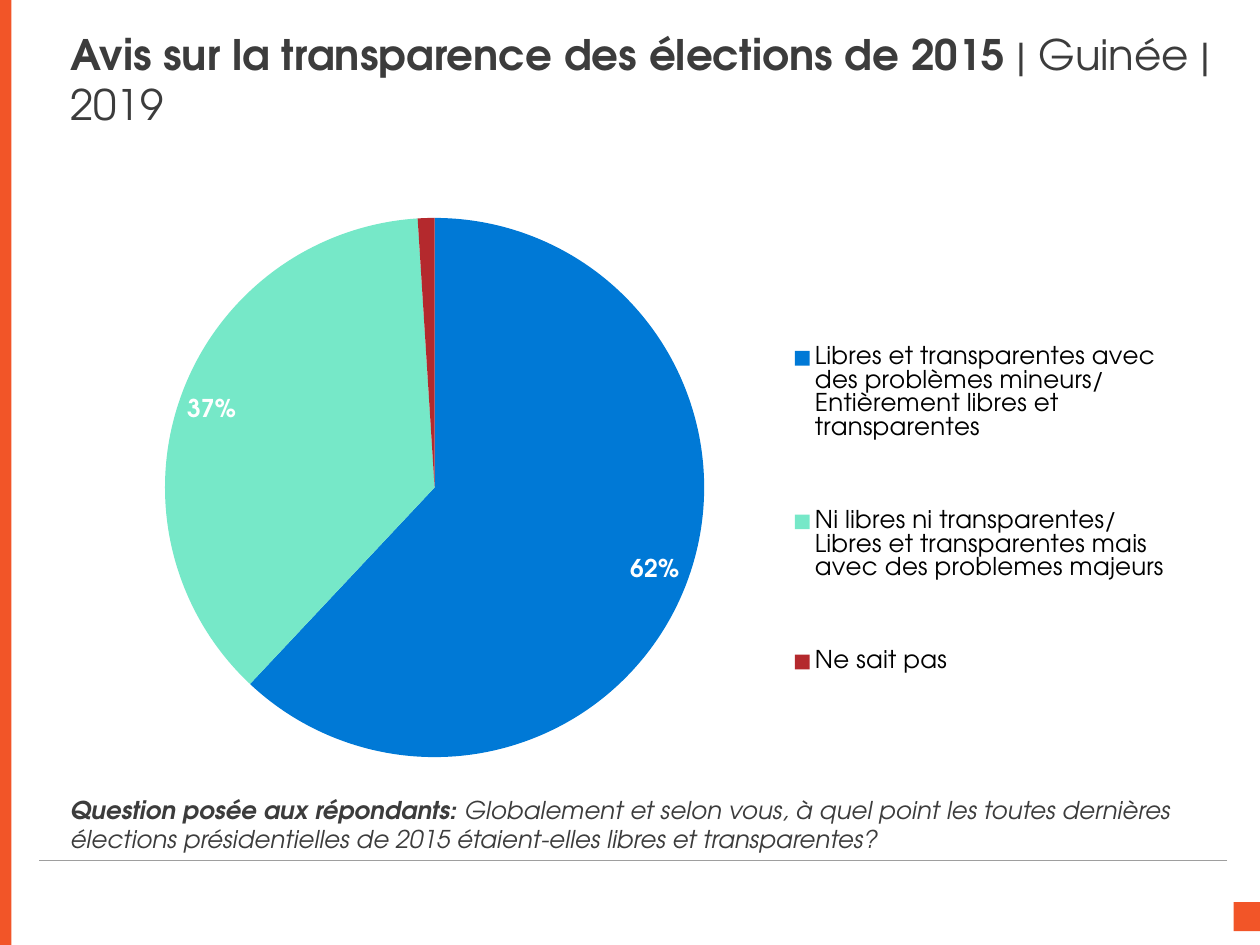
from dataclasses import dataclass
from typing import NamedTuple

import pptx
import pptx.chart.data
import pptx.dml.color
import pptx.enum.chart
import pptx.enum.shapes
import pptx.enum.text
import pptx.oxml
import pptx.oxml.ns
import pptx.util
from pptx.util import Inches


@dataclass(frozen=True)
class Theme:
    font: str = "TeX Gyre Adventor"
    accent: str = "F25528"
    rule: str = "9E9E9E"
    text: str = "3C3C3C"
    legend: str = "000000"
    label: str = "FFFFFF"
    title_size: int = 24
    body_size: int = 14


class Area(NamedTuple):
    left: float
    top: float
    width: float
    height: float

    def lengths(self) -> list:
        return [Inches(value) for value in self]


class Span(NamedTuple):
    text: str
    bold: bool = False


class Slice(NamedTuple):
    name: str
    share: float
    color: str


THEME = Theme()
ACCENTS = [Area(9.79, 7.16, 0.22, 0.23), Area(0, 0, 0.09, 7.5)]
CHART_AREA = Area(0.67, 1.35, 8.69, 4.81)
PIE_AREA = Area(1.31, 1.73, 4.28, 4.28)
LEGEND_AREA = Area(6.25, 2.2, 3.05, 3.7)
SLICES = [
    Slice("Libres et transparentes avec des problèmes mineurs/\n"
          "Entièrement libres et transparentes", 0.62, "0079D6"),
    Slice("Ni libres ni transparentes/\n"
          "Libres et transparentes mais avec des problemes majeurs", 0.37, "76E8C8"),
    Slice("Ne sait pas", 0.01, "B4292D"),
]


def rgb(color: str) -> pptx.dml.color.RGBColor:
    return pptx.dml.color.RGBColor.from_string(color)


def style_font(font, size: int, color: str, bold: bool = False, italic: bool = False) -> None:
    font.name = THEME.font
    font.size = pptx.util.Pt(size)
    font.color.rgb = rgb(color)
    font.bold = bold
    font.italic = italic


def add_accent(page, area: Area) -> None:
    box = page.shapes.add_shape(pptx.enum.shapes.MSO_SHAPE.RECTANGLE, *area.lengths())
    box.shadow.inherit = False
    box.fill.solid()
    box.fill.fore_color.rgb = rgb(THEME.accent)
    box.line.fill.background()


def add_rule(page, left: float, right: float, top: float) -> None:
    rule = page.shapes.add_connector(
        pptx.enum.shapes.MSO_CONNECTOR.STRAIGHT,
        Inches(right), Inches(top), Inches(left), Inches(top))
    rule.line.color.rgb = rgb(THEME.rule)
    rule.line.width = pptx.util.Pt(0.25)
    rule._element.spPr.append(pptx.oxml.parse_xml(
        f"<a:effectLst {pptx.oxml.ns.nsdecls('a')}/>"))


def add_text(page, area: Area, spans: list[Span], size: int,
             anchor: pptx.enum.text.MSO_ANCHOR, italic: bool = False) -> None:
    frame = page.shapes.add_textbox(*area.lengths()).text_frame
    frame.word_wrap = True
    frame.vertical_anchor = anchor
    para = frame.paragraphs[0]
    for span in spans:
        run = para.add_run()
        run.text = span.text
        style_font(run.font, size, THEME.text, span.bold, italic)


def layout_xml(area: Area, target: str = ""):
    """Express an area as fractions of the chart area."""
    fractions = {
        "x": (area.left - CHART_AREA.left) / CHART_AREA.width,
        "y": (area.top - CHART_AREA.top) / CHART_AREA.height,
        "w": area.width / CHART_AREA.width,
        "h": area.height / CHART_AREA.height,
    }
    inner = f'<c:layoutTarget val="{target}"/>' if target else ""
    inner += '<c:xMode val="edge"/><c:yMode val="edge"/>'
    inner += "".join(f'<c:{key} val="{value:.4f}"/>' for key, value in fractions.items())
    return pptx.oxml.parse_xml(
        f"<c:layout {pptx.oxml.ns.nsdecls('c')}>"
        f"<c:manualLayout>{inner}</c:manualLayout></c:layout>")


def replace_layout(parent, layout, before: str) -> None:
    for old in parent.findall(pptx.oxml.ns.qn("c:layout")):
        parent.remove(old)
    parent.find(pptx.oxml.ns.qn(before)).addprevious(layout)


def add_pie(page, slices: list[Slice]) -> None:
    data = pptx.chart.data.CategoryChartData(number_format="0%")
    data.categories = [part.name for part in slices]
    data.add_series("Series 1", [part.share for part in slices])
    chart = page.shapes.add_chart(
        pptx.enum.chart.XL_CHART_TYPE.PIE, *CHART_AREA.lengths(), data).chart
    chart.has_title = False
    style_font(chart.font, THEME.body_size, THEME.legend)

    # Slices and their labels
    plot = chart.plots[0]
    plot.vary_by_categories = True
    for index, part in enumerate(slices):
        fill = plot.series[0].points[index].format.fill
        fill.solid()
        fill.fore_color.rgb = rgb(part.color)
    labels = plot.series[0].data_labels
    labels.show_value = True
    labels.show_percentage = False
    labels.number_format = "0%"
    labels.number_format_is_linked = False
    labels.position = pptx.enum.chart.XL_LABEL_POSITION.BEST_FIT
    style_font(labels.font, THEME.body_size, THEME.label, bold=True)

    # Legend and placement inside the chart
    chart.has_legend = True
    legend = chart.legend
    legend.position = pptx.enum.chart.XL_LEGEND_POSITION.RIGHT
    legend.include_in_layout = False
    style_font(legend.font, THEME.body_size, THEME.legend)
    replace_layout(legend._element, layout_xml(LEGEND_AREA), "c:overlay")
    plot_area = chart._chartSpace.chart.plotArea
    replace_layout(plot_area, layout_xml(PIE_AREA, "inner"), "c:pieChart")


def main() -> None:
    deck = pptx.Presentation()
    deck.slide_width, deck.slide_height = Inches(10), Inches(7.5)
    page = deck.slides.add_slide(deck.slide_layouts[6])

    # Frame
    for area in ACCENTS:
        add_accent(page, area)
    add_rule(page, 0.31, 9.74, 6.83)

    # Title and survey question
    add_text(page, Area(0.46, 0.18, 9.26, 0.89), [
        Span("Avis sur la transparence des élections de 2015 ", True),
        Span("| Guinée | 2019"),
    ], THEME.title_size, pptx.enum.text.MSO_ANCHOR.MIDDLE)
    add_text(page, Area(0.46, 6.26, 9.26, 0.64), [
        Span("Question posée aux répondants: ", True),
        Span("Globalement et selon vous, à quel point les toutes dernières "
             "élections présidentielles de 2015 étaient-elles libres et transparentes?"),
    ], THEME.body_size, pptx.enum.text.MSO_ANCHOR.TOP, italic=True)

    # Results
    add_pie(page, SLICES)
    deck.save("out.pptx")


if __name__ == "__main__":
    main()
